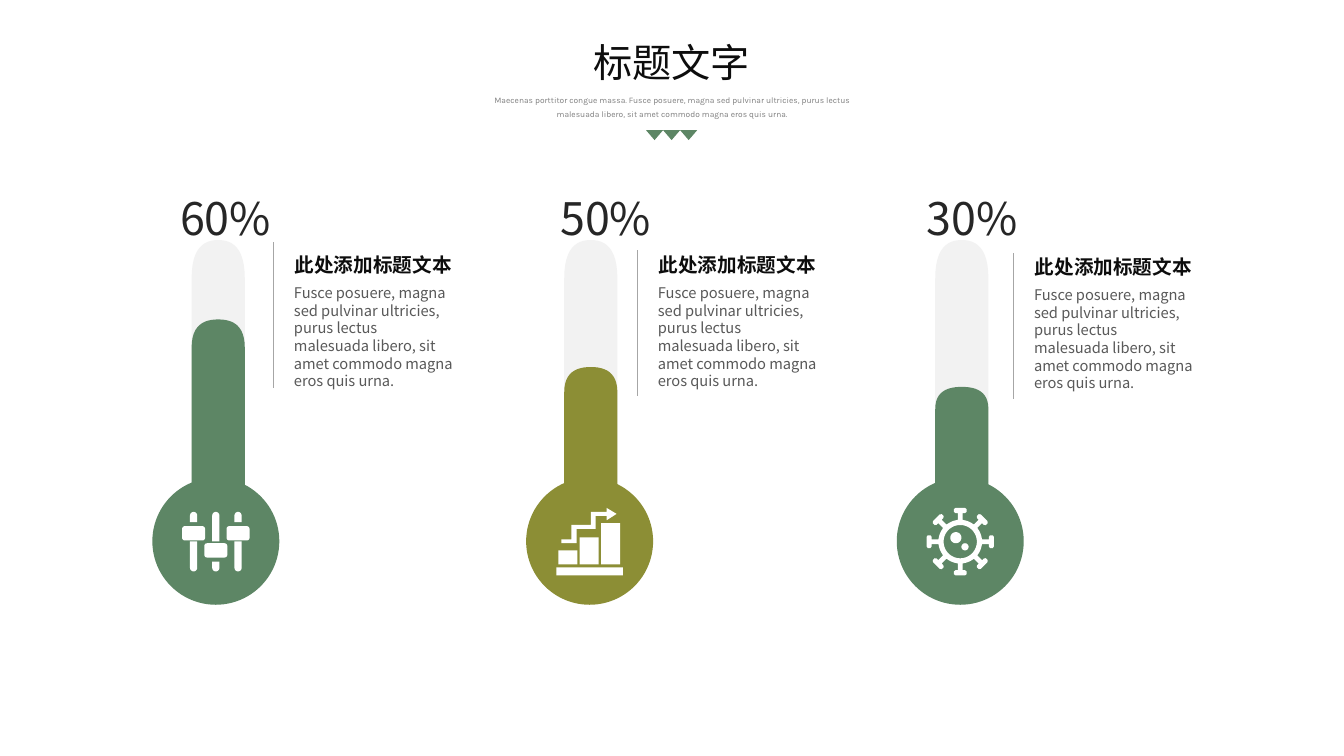
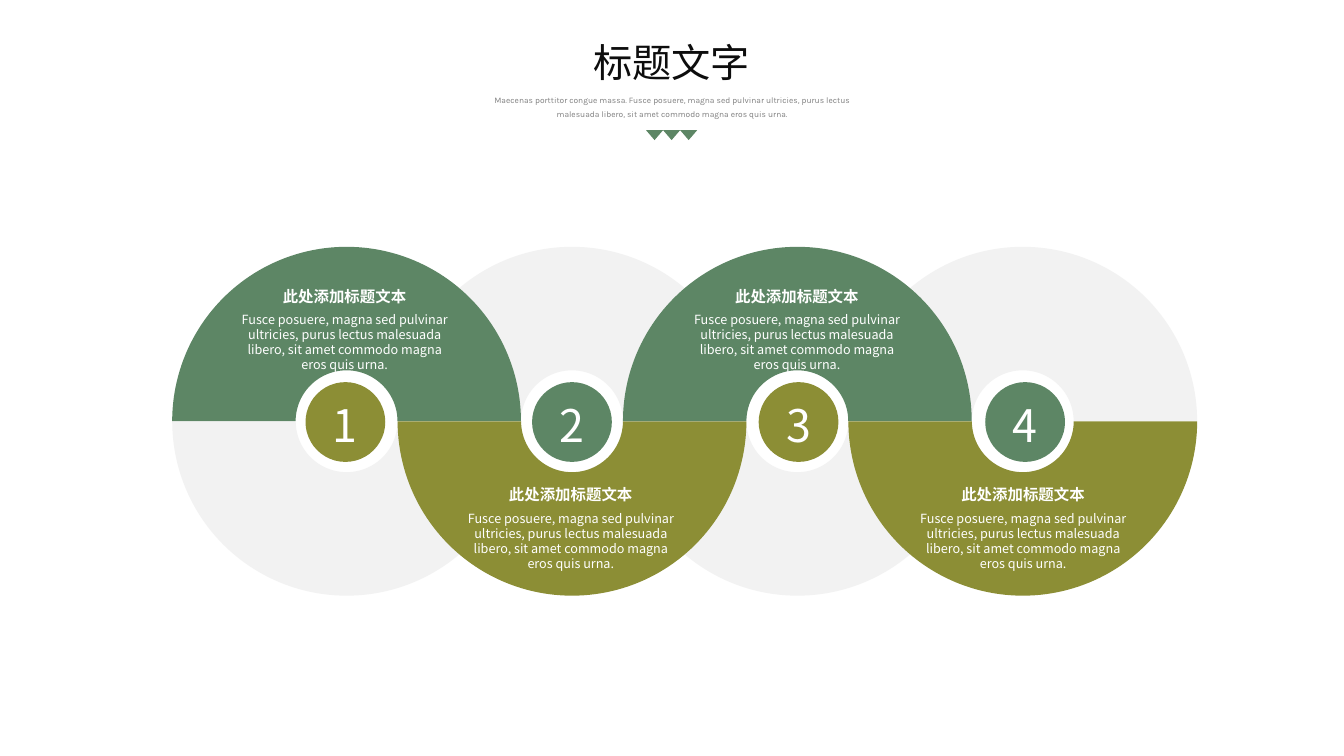
import math

import lxml.etree
import pptx
import pptx.dml.color
import pptx.enum.shapes
import pptx.enum.text
import pptx.oxml.ns
import pptx.util

Cm = pptx.util.Cm
Pt = pptx.util.Pt
RGBColor = pptx.dml.color.RGBColor
KIND = pptx.enum.shapes.MSO_SHAPE
ALIGN = pptx.enum.text.PP_ALIGN
ANCHOR = pptx.enum.text.MSO_ANCHOR
qn = pptx.oxml.ns.qn

GREEN = RGBColor(0x5D, 0x86, 0x65)
OLIVE = RGBColor(0x8C, 0x8E, 0x35)
PALE = RGBColor(0xF2, 0xF2, 0xF2)
RULE = RGBColor(0xA6, 0xA6, 0xA6)
WHITE = RGBColor(0xFF, 0xFF, 0xFF)
BLACK = RGBColor(0x0D, 0x0D, 0x0D)
DARK = RGBColor(0x26, 0x26, 0x26)
GREY = RGBColor(0x59, 0x59, 0x59)
SOFT = RGBColor(0x80, 0x80, 0x80)

SANS = "Noto Sans CJK SC"
LEFT, MID = ALIGN.LEFT, ALIGN.CENTER
STYLES = {
    "title": {"size": 28, "color": BLACK, "align": MID},
    "intro": {"size": 6, "color": SOFT, "align": MID, "name": "Karla", "pitch": 10, "drop": 0},
    "share": {"size": 32, "color": DARK, "align": LEFT},
    "head": {"size": 14, "color": BLACK, "align": MID, "bold": True},
    "body": {"size": 10.5, "color": GREY, "align": LEFT},
    "digit": {"size": 32, "color": WHITE, "align": MID, "inset": 0, "anchor": ANCHOR.MIDDLE},
    "arc head": {"size": 11, "color": WHITE, "align": MID, "bold": True},
    "arc body": {"size": 9, "color": WHITE, "align": MID},
}

TITLE = "标题文字"
INTRO = ("Maecenas porttitor congue massa. Fusce posuere, magna sed pulvinar ultricies, "
         "purus lectus malesuada libero, sit amet commodo magna eros quis urna.")
HEAD = "此处添加标题文本"
BODY = ("Fusce posuere, magna sed pulvinar ultricies, purus lectus malesuada libero, "
        "sit amet commodo magna eros quis urna.")

GAUGES = [
    {"share": "60%", "color": GREEN, "bulb": 3.84, "tube": 4.83, "level": 8.05, "curve": 0.71,
     "label": 4.29, "rule": (6.88, 6.1), "text": (7.16, 6.2), "icon": "sliders"},
    {"share": "50%", "color": OLIVE, "bulb": 13.26, "tube": 14.22, "level": 9.25, "curve": 0.64,
     "label": 13.87, "rule": (16.05, 6.3), "text": (16.33, 6.2), "icon": "growth"},
    {"share": "30%", "color": GREEN, "bulb": 22.6, "tube": 23.57, "level": 9.75, "curve": 0.56,
     "label": 23.11, "rule": (25.53, 6.38), "text": (25.81, 6.25), "icon": "virus"},
]
STEPS = ["1", "2", "3", "4"]

SLIDERS = [(-0.56, -0.49, -0.39, -0.01), (0, -0.01, 0.04, 0.5), (0.56, -0.49, -0.39, -0.01)]
BARS = [0.22, -0.11, -0.47]
ARROW = [(0.43, -0.85), (0.68, -0.7), (0.43, -0.54), (0.43, -0.65), (0.15, -0.65),
         (0.15, -0.32), (-0.33, -0.32), (-0.33, 0.04), (-0.71, 0.04), (-0.71, -0.06),
         (-0.46, -0.06), (-0.46, -0.42), (0.03, -0.42), (0.03, -0.75), (0.43, -0.75)]
SPIKE = [(-0.06, 0.55), (-0.06, 0.72), (-0.12, 0.72), (-0.16, 0.75), (-0.16, 0.82), (-0.12, 0.85),
         (0.12, 0.85), (0.16, 0.82), (0.16, 0.75), (0.12, 0.72), (0.06, 0.72), (0.06, 0.55)]


def arc(x, y, size, start=0, end=360, count=36):
    turns = [math.radians(start + (end - start) * i / count) for i in range(count + 1)]
    return [(x + size * math.cos(t), y + size * math.sin(t)) for t in turns]


def box(x, y, wide, high, top=0, base=0):
    right, foot = x + wide, y + high
    ends = [(x + top, y + top, top, 180), (right - top, y + top, top, 270),
            (right - base, foot - base, base, 0), (x + base, foot - base, base, 90)]
    return [p for cx, cy, size, turn in ends for p in arc(cx, cy, size, turn, turn + 90, 6)]


def sliders():
    loops = []
    for x, upper, knob, lower in SLIDERS:
        loops += [box(x - 0.09, -0.75, 0.18, upper + 0.75, top=0.09),
                  box(x - 0.29, knob, 0.58, 0.36, 0.07, 0.07),
                  box(x - 0.09, lower, 0.18, 0.75 - lower, base=0.09)]
    return loops


def growth():
    bars = [box(-0.79 + 0.54 * i, top, 0.48, 0.57 - top) for i, top in enumerate(BARS)]
    return [box(-0.84, 0.65, 1.68, 0.2), *bars, ARROW]


def virus():
    rim = []
    for turn in range(0, 360, 45):
        sin, cos = math.sin(math.radians(turn)), math.cos(math.radians(turn))
        rim += [(r * cos - x * sin, r * sin + x * cos) for x, r in SPIKE]
        rim += arc(0, 0, 0.55, turn + 10, turn + 35, 5)
    return [rim, arc(0, 0, 0.42), arc(-0.11, -0.1, 0.14), arc(0.12, 0.13, 0.09)]


ICONS = {"sliders": sliders, "growth": growth, "virus": virus}


def paint(shape, color):
    shape.shadow.inherit = False
    shape.fill.solid()
    shape.fill.fore_color.rgb = color
    shape.line.fill.background()
    return shape


def draw(slide, kind, place, color):
    return paint(slide.shapes.add_shape(kind, *map(Cm, place)), color)


def carve(slide, loops, x, y, color):
    loops = [[(Cm(x + px), Cm(y + py)) for px, py in loop] for loop in loops]
    pen = slide.shapes.build_freeform(*loops[0][0])
    for i, loop in enumerate(loops):
        if i:
            pen.move_to(*loop[0])
        pen.add_line_segments(loop[1:], close=True)
    return paint(pen.convert_to_shape(), color)


def write(shape, text, style, wrap=True):
    look = {"name": SANS, "bold": False, "inset": 3.6, "drop": 0.1,
            "pitch": STYLES[style]["size"] * 1.2, "anchor": ANCHOR.TOP, **STYLES[style]}
    frame = shape.text_frame
    traits = {
        "auto_size": pptx.enum.text.MSO_AUTO_SIZE.NONE,
        "word_wrap": wrap,
        "vertical_anchor": look["anchor"],
        "margin_top": Pt(look["inset"] + look["size"] * look["drop"]),
        "margin_bottom": Pt(look["inset"]),
        "margin_left": Pt(look["inset"] * 2),
        "margin_right": Pt(look["inset"] * 2),
    }
    for key, value in traits.items():
        setattr(frame, key, value)
    para = frame.paragraphs[0]
    traits = {"alignment": look["align"], "line_spacing": Pt(look["pitch"]),
              "space_before": Pt(0), "space_after": Pt(0)}
    for key, value in traits.items():
        setattr(para, key, value)
    run = para.add_run()
    run.text = text
    for key, value in {"size": Pt(look["size"]), "name": look["name"], "bold": look["bold"]}.items():
        setattr(run.font, key, value)
    run.font.color.rgb = look["color"]
    east = lxml.etree.SubElement(run._r.get_or_add_rPr(), qn("a:ea"))
    east.set("typeface", look["name"])


def label(slide, place, text, style, wrap=True):
    write(slide.shapes.add_textbox(*map(Cm, place)), text, style, wrap)


def rule(slide, x, y, high):
    line = slide.shapes.add_connector(
        pptx.enum.shapes.MSO_CONNECTOR.STRAIGHT, Cm(x), Cm(y), Cm(x), Cm(y + high))
    line.line.color.rgb = RULE
    line.line.width = Pt(0.5)
    lxml.etree.SubElement(line._element.spPr, qn("a:effectLst"))


def start(deck):
    slide = deck.slides.add_slide(deck.slide_layouts[5])
    title = slide.shapes.title
    spots = zip(("left", "top", "width", "height"), (14.68, 0.74, 4.5, 1.45))
    for key, value in spots:
        setattr(title, key, Cm(value))
    write(title, TITLE, "title", wrap=False)
    label(slide, (12.17, 2.18, 9.53, 0.94), INTRO, "intro")
    for i in range(3):
        draw(slide, KIND.ISOSCELES_TRIANGLE, (16.28 + 0.43 * i, 3.28, 0.43, 0.25), GREEN).rotation = 180
    return slide


def tube(slide, x, top, curve, color):
    half, base = 0.67, 13.5
    steps = [i / 12 for i in range(13)]
    side = [(half * (1.38 * t * t * (1 - t) + t ** 3),
             curve * ((1 - t) ** 3 + 0.6 * t * (1 - t) ** 2)) for t in steps]
    other = [(2 * half - px, py) for px, py in reversed(side)]
    foot = base - top
    carve(slide, [[(0, foot), *side, *other, (2 * half, foot)]], x, top, color)


def gauges(deck):
    slide = start(deck)
    for item in GAUGES:
        color, bulb = item["color"], item["bulb"]
        tube(slide, item["tube"], 6.05, 0.97, PALE)
        tube(slide, item["tube"], item["level"], item["curve"], color)
        draw(slide, KIND.OVAL, (bulb, 12.04, 3.2, 3.2), color)
        carve(slide, ICONS[item["icon"]](), bulb + 1.6, 13.65, WHITE)
        rule(slide, *item["rule"], 3.67)
        label(slide, (item["label"], 4.57, 3.61, 1.63), item["share"], "share")
        x, y = item["text"]
        label(slide, (x, y, 4.5, 0.86), HEAD, "head", wrap=False)
        label(slide, (x, y + 0.79, 4.5, 2.8), BODY, "body")


def half(slide, i, low, color):
    shape = draw(slide, KIND.BLOCK_ARC, (4.34 + 5.68 * i, 6.22, 8.79, 8.79), color)
    for spot, value in enumerate((108, 0, 0.354)):
        shape.adjustments[spot] = value
    shape.rotation = 180 if low else 0


def arcs(deck):
    slide = start(deck)
    pairs = [(GREEN, OLIVE), (OLIVE, GREEN)]
    for i in range(len(STEPS)):
        half(slide, i, i % 2 == 0, PALE)
    for i in range(len(STEPS)):
        half(slide, i, i % 2 == 1, pairs[i % 2][0])
    for i, digit in enumerate(STEPS):
        disc = draw(slide, KIND.OVAL, (7.7 + 5.71 * i, 9.63, 2.01, 2.01), pairs[i % 2][1])
        write(disc, digit, "digit")
        x, y = 5.74 + 5.7 * i, 12.07 if i % 2 else 7.06
        label(slide, (x, y, 5.89, 0.74), HEAD, "arc head", wrap=False)
        label(slide, (x, y + 0.64, 5.89, 1.9), BODY, "arc body")


def main():
    deck = pptx.Presentation()
    deck.slide_width, deck.slide_height = Cm(33.87), Cm(19.05)
    gauges(deck)
    arcs(deck)
    deck.save("out.pptx")


if __name__ == "__main__":
    main()
